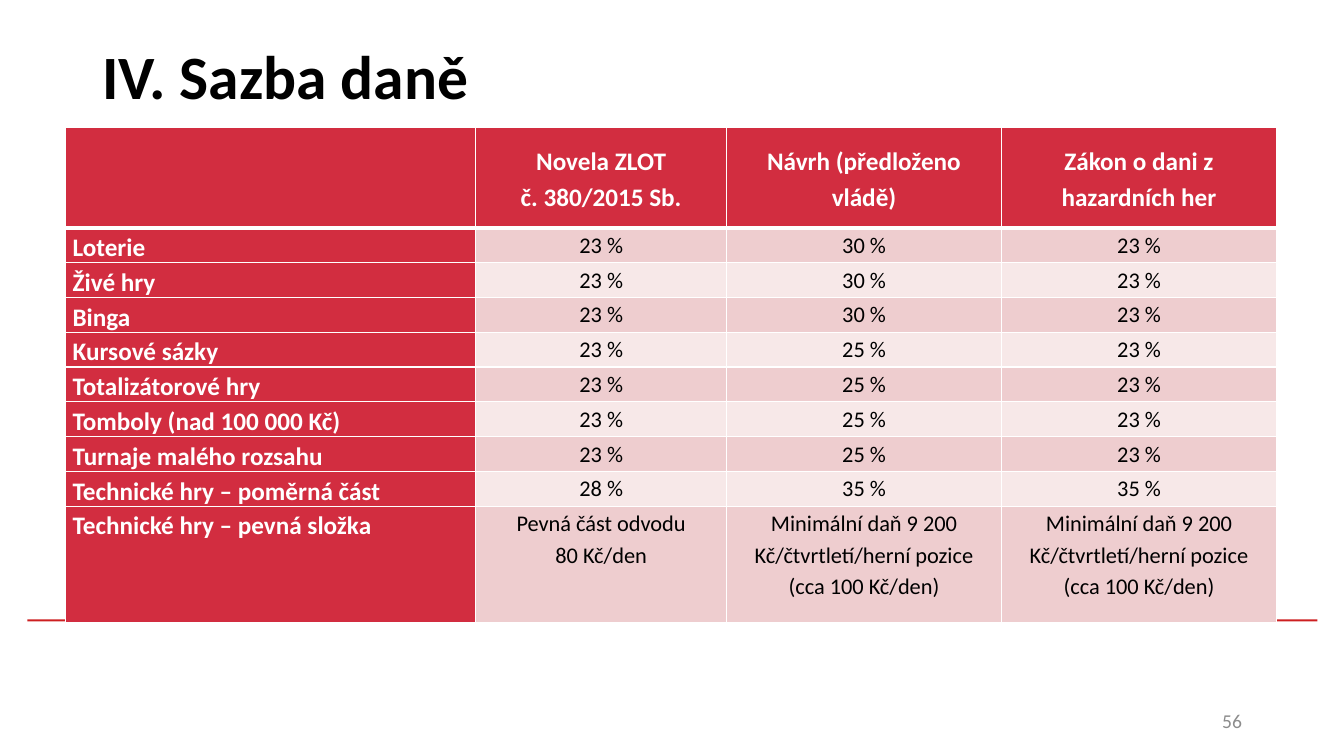
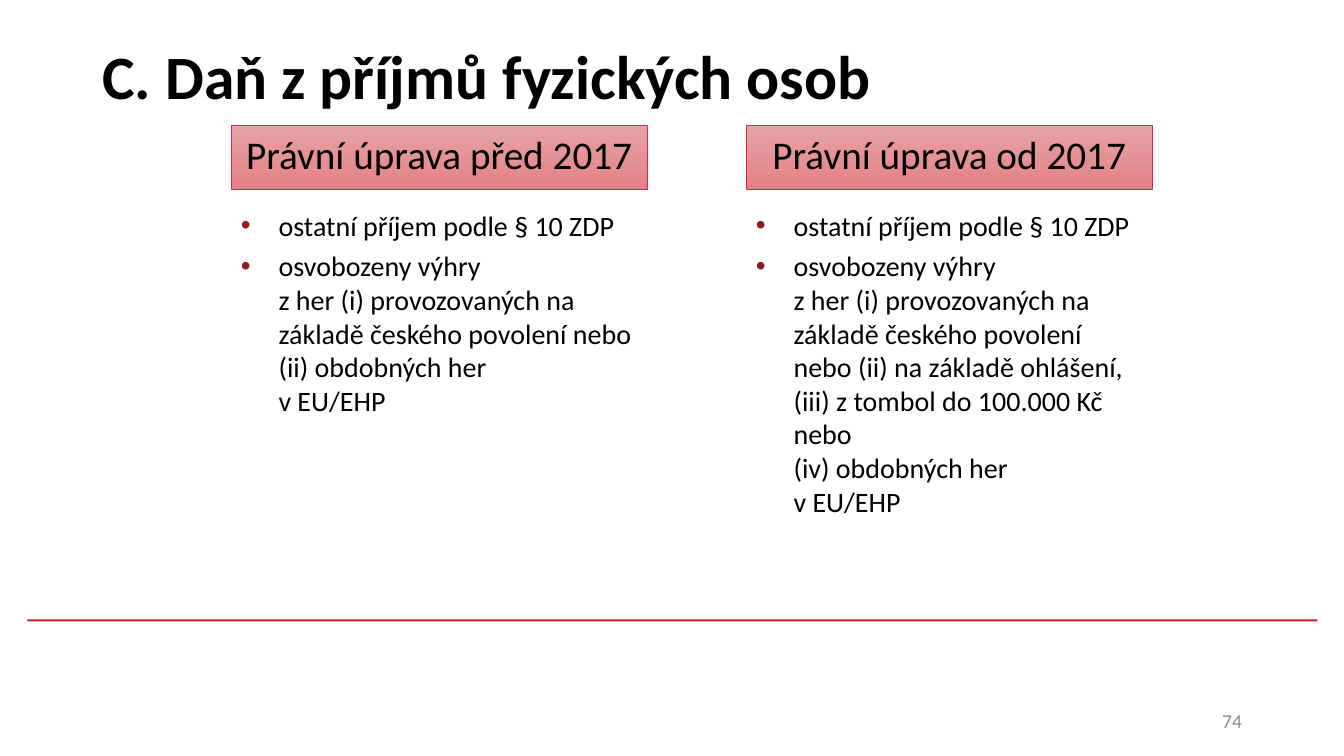
from dataclasses import dataclass
from typing import Optional

from lxml.etree import SubElement
from pptx import Presentation
from pptx.dml.color import RGBColor
from pptx.enum.shapes import MSO_SHAPE as Preset
from pptx.enum.text import MSO_ANCHOR as Anchor, PP_ALIGN as Align
from pptx.oxml.ns import qn
from pptx.util import Cm, Pt

FONT = "Calibri"
BLACK, WHITE, GREY = "000000", "FFFFFF", "8C8C8C"
RED, RULE_RED, BULLET_RED = "D22D40", "CD1F21", "92191C"
BANDS = ("EECDCF", "F7E8E8")
HEADING_GRADIENT = ("E7A3A7", "E38186")


@dataclass(frozen=True)
class Box:
    left: float
    top: float
    width: float
    height: float

    def emu(self) -> tuple:
        return Cm(self.left), Cm(self.top), Cm(self.width), Cm(self.height)


@dataclass(frozen=True)
class TextStyle:
    size: float
    color: str = BLACK
    bold: bool = False
    align: Optional[Align] = None
    line_spacing: Optional[float] = None
    space_before: float = 0
    bullet: bool = False


@dataclass(frozen=True)
class Panel:
    left: float
    width: float
    heading: str
    points: str


RULE = Box(0.69, 15.61, 32.51, 0.05)
TITLE = Box(2.33, 0.05, 29.21, 3.68)
PAGE_NUMBER = Box(23.93, 17.65, 7.62, 1.02)

TITLE_STYLE = TextStyle(44, bold=True)
PAGE_STYLE = TextStyle(14, GREY, align=Align.RIGHT)
HEADING_STYLE = TextStyle(28, align=Align.CENTER)
POINT_STYLE = TextStyle(20, space_before=4.8, bullet=True)
LABEL_STYLE = TextStyle(18, WHITE, True, line_spacing=1.15)
COLUMN_STYLE = TextStyle(18, WHITE, True, Align.CENTER, 1.15)
VALUE_STYLE = TextStyle(16, align=Align.CENTER, line_spacing=1.15)

COLUMN_WIDTHS = (10.34, 6.32, 6.93, 6.93)
HEADER_HEIGHT, ROW_HEIGHT, LAST_HEIGHT = 2.54, 0.8, 2.92
MINIMUM_TAX = "Minimální daň 9 200 Kč/čtvrtletí/herní pozice\n(cca 100 Kč/den)"
RATES = (
    ("", "Novela ZLOT\vč. 380/2015 Sb.", "Návrh (předloženo vládě)", "Zákon o dani z hazardních her"),
    ("Loterie", "23 %", "30 %", "23 %"),
    ("Živé hry", "23 %", "30 %", "23 %"),
    ("Binga", "23 %", "30 %", "23 %"),
    ("Kursové sázky", "23 %", "25 %", "23 %"),
    ("Totalizátorové hry", "23 %", "25 %", "23 %"),
    ("Tomboly (nad 100 000 Kč)", "23 %", "25 %", "23 %"),
    ("Turnaje malého rozsahu", "23 %", "25 %", "23 %"),
    ("Technické hry – poměrná část", "28 %", "35 %", "35 %"),
    ("Technické hry – pevná složka", "Pevná část odvodu\n80 Kč/den", MINIMUM_TAX, MINIMUM_TAX),
)

PANELS = (
    Panel(5.82, 10.49, "Právní úprava před 2017",
          "ostatní příjem podle § 10 ZDP\n"
          "osvobozeny výhry\vz her (i) provozovaných na základě českého povolení nebo "
          "(ii) obdobných her\vv EU/EHP"),
    Panel(18.8, 10.24, "Právní úprava od 2017",
          "ostatní příjem podle § 10 ZDP\n"
          "osvobozeny výhry\vz her (i) provozovaných na základě českého povolení nebo "
          "(ii) na základě ohlášení, (iii) z tombol do 100.000 Kč nebo\v"
          "(iv) obdobných her\vv EU/EHP"),
)


def rgb(color: str) -> RGBColor:
    return RGBColor.from_string(color)


def add_bullet(paragraph) -> None:
    properties = paragraph._p.get_or_add_pPr()
    properties.set("marL", str(Cm(0.95)))
    properties.set("indent", str(-Cm(0.95)))
    bullet_color = SubElement(properties, qn("a:buClr"))
    SubElement(bullet_color, qn("a:srgbClr"), val=BULLET_RED)
    SubElement(properties, qn("a:buFont"), typeface="Arial")
    SubElement(properties, qn("a:buChar"), char="•")


def write(frame, text: str, style: TextStyle) -> None:
    frame.word_wrap = True
    frame.text = text
    for index, paragraph in enumerate(frame.paragraphs):
        if style.bullet:
            add_bullet(paragraph)
        if style.align is not None:
            paragraph.alignment = style.align
        if style.line_spacing:
            paragraph.line_spacing = style.line_spacing
        if index and style.space_before:
            paragraph.space_before = Pt(style.space_before)
        font = paragraph.font
        font.name, font.size, font.bold = FONT, Pt(style.size), style.bold
        font.color.rgb = rgb(style.color)


def add_text(slide, box: Box, text: str, style: TextStyle, anchor=Anchor.TOP) -> None:
    frame = slide.shapes.add_textbox(*box.emu()).text_frame
    frame.vertical_anchor = anchor
    write(frame, text, style)


def add_rectangle(slide, box: Box):
    rectangle = slide.shapes.add_shape(Preset.RECTANGLE, *box.emu())
    rectangle.shadow.inherit = False
    return rectangle


def add_base_slide(deck, title: str, number: int):
    slide = deck.slides.add_slide(deck.slide_layouts[6])
    rule = add_rectangle(slide, RULE)
    rule.fill.solid()
    rule.fill.fore_color.rgb = rgb(RULE_RED)
    rule.line.fill.background()
    add_text(slide, TITLE, title, TITLE_STYLE, Anchor.MIDDLE)
    add_text(slide, PAGE_NUMBER, str(number), PAGE_STYLE, Anchor.MIDDLE)
    return slide


def add_borders(cell, top: float, bottom: float) -> None:
    properties = cell._tc.get_or_add_tcPr()
    for side, width in (("L", 1), ("R", 1), ("T", top), ("B", bottom)):
        border = SubElement(properties, qn(f"a:ln{side}"), w=str(Pt(width)))
        fill = SubElement(border, qn("a:solidFill"))
        SubElement(fill, qn("a:srgbClr"), val=WHITE)


def fill_cell(cell, text: str, row: int, column: int) -> None:
    header, label = row == 0, column == 0
    cell.margin_left = cell.margin_right = Cm(0.18)
    cell.margin_top = cell.margin_bottom = 0
    cell.vertical_anchor = Anchor.MIDDLE if header else Anchor.TOP
    add_borders(cell, 3 if row == 1 else 1, 3 if header else 1)
    cell.fill.solid()
    cell.fill.fore_color.rgb = rgb(RED if header or label else BANDS[(row - 1) % 2])
    style = LABEL_STYLE if label else COLUMN_STYLE if header else VALUE_STYLE
    write(cell.text_frame, text, style)


def add_rates_table(slide) -> None:
    heights = (HEADER_HEIGHT, *[ROW_HEIGHT] * (len(RATES) - 2), LAST_HEIGHT)
    box = Box(1.65, 3.2, sum(COLUMN_WIDTHS), sum(heights))
    table = slide.shapes.add_table(len(RATES), len(COLUMN_WIDTHS), *box.emu()).table
    table.first_row = table.horz_banding = False
    for column, width in zip(table.columns, COLUMN_WIDTHS):
        column.width = Cm(width)
    for row, (values, height) in enumerate(zip(RATES, heights)):
        table.rows[row].height = Cm(height)
        for column, text in enumerate(values):
            fill_cell(table.cell(row, column), text, row, column)


def add_panel(slide, panel: Panel) -> None:
    heading = add_rectangle(slide, Box(panel.left, 3.15, panel.width, 1.63))
    heading.fill.gradient()
    heading.fill.gradient_angle = 270
    for stop, color in zip(heading.fill.gradient_stops, HEADING_GRADIENT):
        stop.color.rgb = rgb(color)
    heading.line.color.rgb = rgb(RED)
    heading.line.width = Pt(0.5)
    heading.text_frame.vertical_anchor = Anchor.TOP
    write(heading.text_frame, panel.heading, HEADING_STYLE)
    add_text(slide, Box(panel.left, 5.13, panel.width, 10.06), panel.points, POINT_STYLE)


def main() -> None:
    deck = Presentation()
    deck.slide_width, deck.slide_height = Cm(33.87), Cm(19.05)
    add_rates_table(add_base_slide(deck, "IV. Sazba daně", 56))
    income_tax = add_base_slide(deck, "C. Daň z příjmů fyzických osob", 74)
    for panel in PANELS:
        add_panel(income_tax, panel)
    deck.save("out.pptx")


if __name__ == "__main__":
    main()
